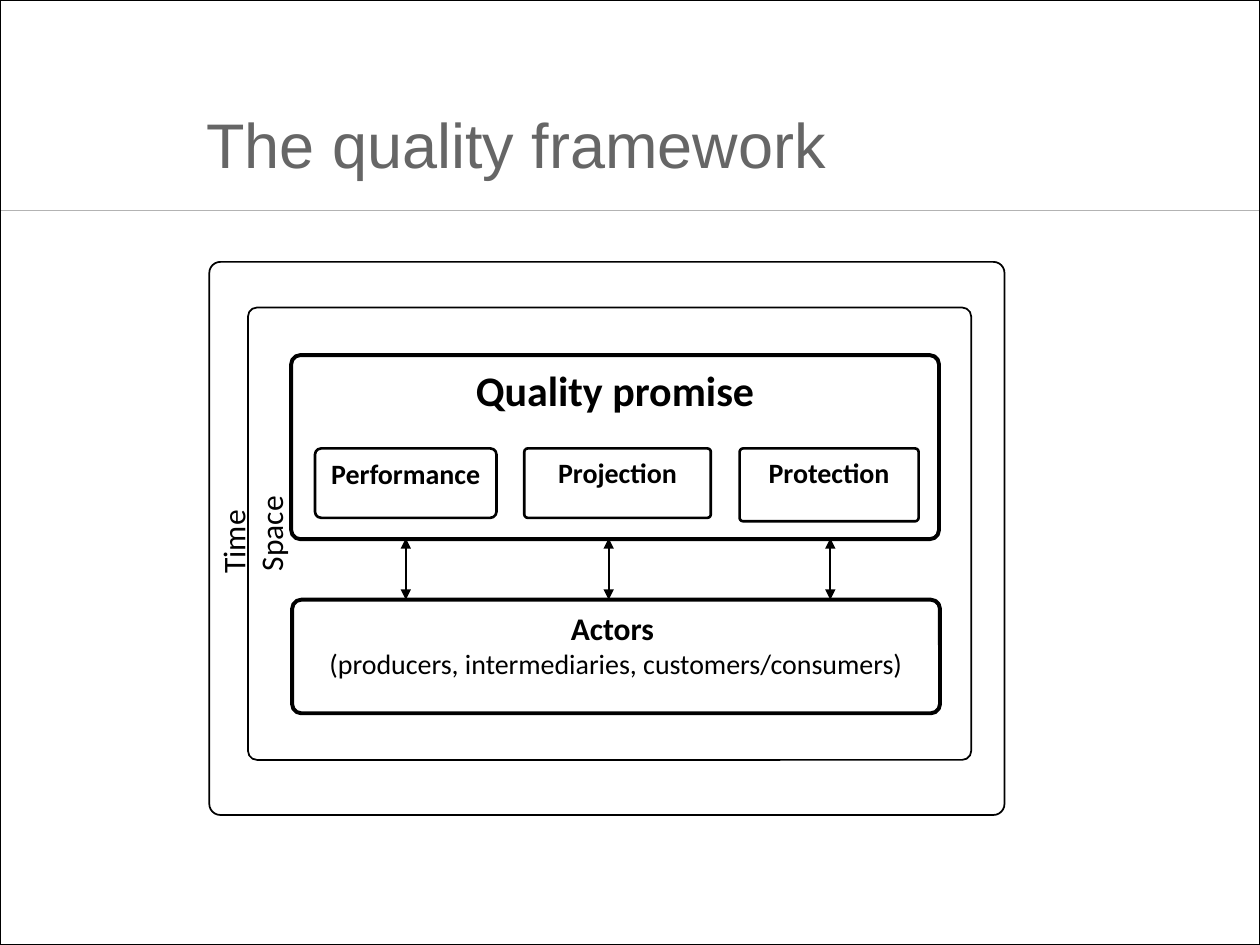
"""Build the quality framework slide."""
from lxml.etree import SubElement
from pptx import Presentation
from pptx.dml.color import RGBColor
from pptx.enum.shapes import MSO_CONNECTOR, MSO_SHAPE
from pptx.enum.text import MSO_ANCHOR, PP_ALIGN
from pptx.oxml.ns import qn
from pptx.util import Cm, Pt

BLACK = RGBColor(0, 0, 0)
WHITE = RGBColor(255, 255, 255)
GREY = RGBColor(0x66, 0x66, 0x66)
SILVER = RGBColor(0xB3, 0xB3, 0xB3)


def write(para, text, size=16, bold=False, font="Calibri", color=BLACK,
          align=PP_ALIGN.CENTER, after=0):
    """Put formatted text in a paragraph."""
    para.alignment = align
    para.space_after = Pt(after)
    run = para.add_run()
    run.text = text
    run.font.size = Pt(size)
    run.font.bold = bold
    run.font.name = font
    run.font.color.rgb = color


class Sketch:
    """Hold the style and the current slide."""

    def __init__(self, slide, thin=1, thick=2.25):
        """Store the slide and line widths."""
        self.slide = slide
        self.thin = thin
        self.thick = thick

    def box(self, place, width, fill=WHITE, round=None):
        """Draw a framed box and return its text frame."""
        kind = MSO_SHAPE.RECTANGLE if round is None else MSO_SHAPE.ROUNDED_RECTANGLE
        shape = self.slide.shapes.add_shape(kind, *map(Cm, place))
        shape.shadow.inherit = False
        if round is not None:
            shape.adjustments[0] = round
        if fill is None:
            shape.fill.background()
        else:
            shape.fill.solid()
            shape.fill.fore_color.rgb = fill
        shape.line.color.rgb = BLACK
        shape.line.width = Pt(width)
        frame = shape.text_frame
        frame.word_wrap = True
        frame.vertical_anchor = MSO_ANCHOR.TOP
        return frame

    def label(self, place, text, anchor=MSO_ANCHOR.MIDDLE, turn=False, **style):
        """Place a text box, turned upward on request."""
        frame = self.slide.shapes.add_textbox(*map(Cm, place)).text_frame
        frame.word_wrap = True
        frame.vertical_anchor = anchor
        if turn:
            frame._txBody.bodyPr.set("vert", "vert270")
        else:
            frame.margin_bottom = 0
        write(frame.paragraphs[0], text, **style)

    def line(self, start, end, width, color=BLACK, heads=False):
        """Draw a straight line, with two heads on request."""
        link = self.slide.shapes.add_connector(
            MSO_CONNECTOR.STRAIGHT, *map(Cm, start + end))
        link.line.color.rgb = color
        link.line.width = Pt(width)
        if heads:
            for tag in ("a:headEnd", "a:tailEnd"):
                SubElement(link.line._get_or_add_ln(), qn(tag), type="triangle")
        SubElement(link._element.spPr, qn("a:effectLst"))


def main():
    """Build and save the slide."""
    deck = Presentation()
    deck.slide_width, deck.slide_height = Cm(25.4), Cm(19.05)
    art = Sketch(deck.slides.add_slide(deck.slide_layouts[6]))

    art.line((0, 4.24), (25.4, 4.24), 0.75, SILVER)
    art.box((0, 0, 25.4, 19.05), 0.75, fill=None)
    art.label((3.91, 0.64, 20.42, 3.02), "The quality framework",
              anchor=MSO_ANCHOR.BOTTOM, size=36, font="Arial", color=GREY,
              align=PP_ALIGN.LEFT)

    art.box((4.22, 5.28, 16.03, 11.15), art.thin, round=0.02)
    art.box((5, 6.2, 14.58, 9.12), art.thin, fill=None, round=0.02)

    promise = art.box((5.87, 7.16, 13.06, 3.71), art.thick, round=0.05)
    write(promise.paragraphs[0], "Quality promise", size=24, bold=True, after=10)

    for text, left, width, height, round in (
            ("Projection", 10.57, 3.76, 1.4, 0.05),
            ("Protection", 14.91, 3.61, 1.47, 0.05),
            ("Performance", 6.35, 3.66, 1.4, 0.09)):
        part = art.box((left, 9.04, width, height), 1.5, round=round)
        write(part.paragraphs[0], text, bold=True, after=10)

    actors = art.box((5.89, 12.09, 13.06, 2.29), art.thick, round=0.08)
    write(actors.paragraphs[0], "Actors ", size=18, bold=True)
    write(actors.add_paragraph(), "(producers, intermediaries, customers/consumers)")

    for left in (8.18, 12.27, 16.74):
        art.line((left, 10.85), (left, 12.09), art.thin, heads=True)

    for text, place in (("Time", (4.01, 9.73, 1.37, 2.39)),
                        ("Space", (4.72, 9.53, 1.47, 2.46))):
        art.label(place, text, turn=True, size=18, after=10)

    deck.save("out.pptx")


if __name__ == "__main__":
    main()
